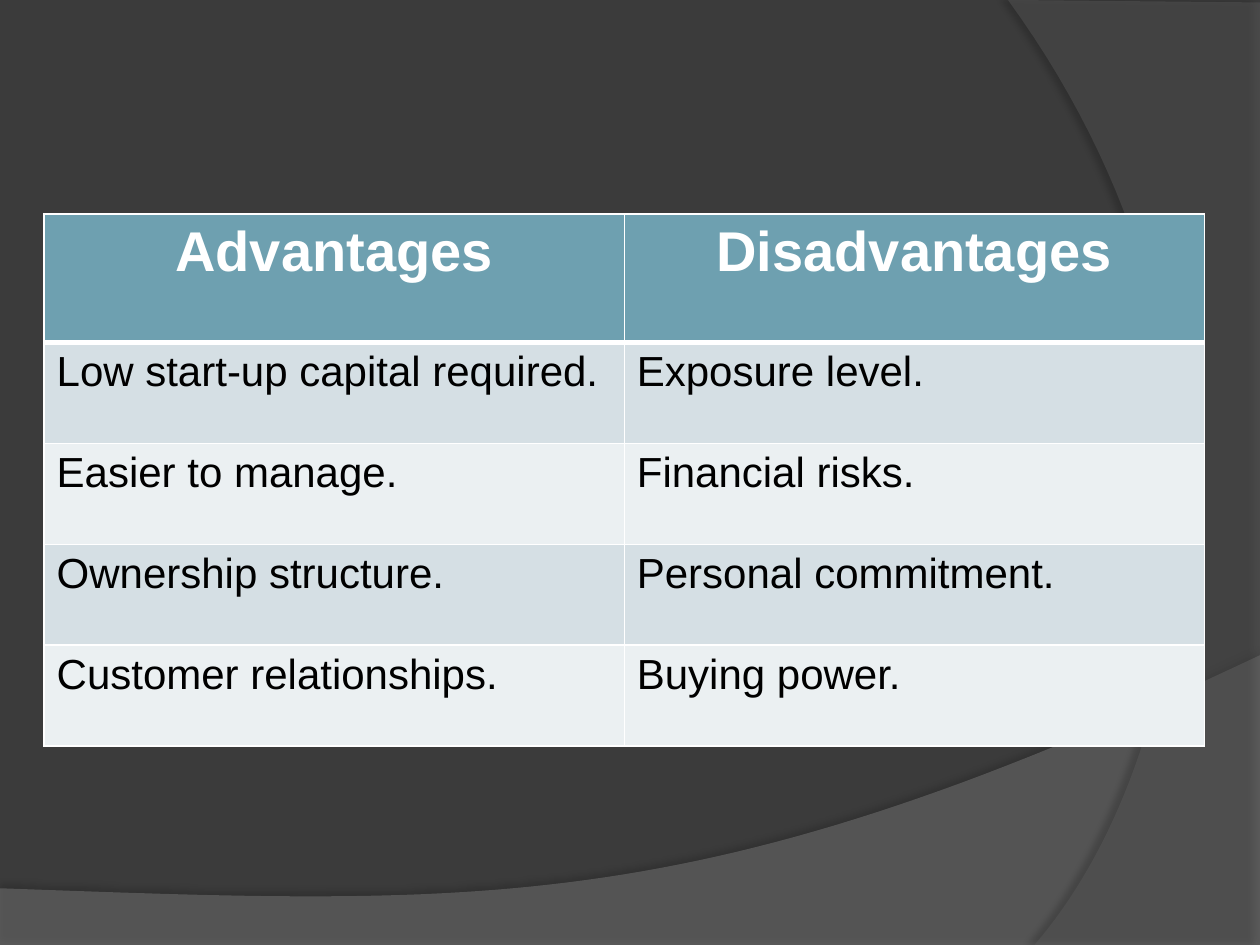
from dataclasses import dataclass

from lxml.etree import SubElement
from pptx import Presentation
from pptx.dml.color import RGBColor
from pptx.enum.text import PP_ALIGN
from pptx.oxml.ns import qn
from pptx.util import Inches, Pt

BACKGROUND = RGBColor(0x3B, 0x3B, 0x3B)
WAVE_GRAY = RGBColor(0x7F, 0x7F, 0x7F)
ARC_GRAY = RGBColor(0x5E, 0x5E, 0x5E)
HEADER_BLUE = RGBColor(0x6E, 0xA0, 0xB0)
BAND_DARK = RGBColor(0xD5, 0xDF, 0xE4)
BAND_LIGHT = RGBColor(0xEB, 0xF0, 0xF2)
WHITE = RGBColor(0xFF, 0xFF, 0xFF)
BLACK = RGBColor(0, 0, 0)

FONT = "Arial"
CURVE_STEPS = 60
Point = tuple[float, float]


@dataclass
class Swoosh:
    corners: list[Point]
    curve: tuple[Point, Point, Point, Point]
    color: RGBColor
    opacity: int
    shadow_opacity: int
    shadow_distance: float
    shadow_angle: int


@dataclass
class RowStyle:
    fill: RGBColor
    color: RGBColor
    size: int
    bold: bool
    align: PP_ALIGN
    top_line: int
    bottom_line: int


SWOOSHES = [
    Swoosh([(0, 7.05), (0, 7.51), (10, 7.51)],
           ((10, 5.2), (5.59, 7.29), (3.91, 7.19), (0, 7.05)),
           WAVE_GRAY, 45, 35, 3.5, 270),
    Swoosh([(10, 0.02), (10, 7.5)],
           ((8.21, 7.5), (9.35, 6.19), (10.18, 3), (8, 0)),
           ARC_GRAY, 40, 45, 4, 180),
]

ROWS = [
    ("Advantages", "Disadvantages"),
    ("Low start-up capital required.", "Exposure level."),
    ("Easier to manage.", "Financial risks."),
    ("Ownership structure.", "Personal commitment."),
    ("Customer relationships.", "Buying power."),
]


def curve_points(curve: tuple[Point, Point, Point, Point]) -> list[Point]:
    """Points along a cubic Bezier curve."""
    points = []
    for step in range(CURVE_STEPS + 1):
        t = step / CURVE_STEPS
        weights = ((1 - t) ** 3, 3 * t * (1 - t) ** 2, 3 * t ** 2 * (1 - t), t ** 3)
        points.append(tuple(sum(weight * point[axis] for weight, point in zip(weights, curve))
                            for axis in (0, 1)))
    return points


def add_alpha(color_element, percent: int) -> None:
    SubElement(color_element, qn("a:alpha"), val=str(percent * 1000))


def draw_swoosh(page, swoosh: Swoosh) -> None:
    outline = [(Inches(x), Inches(y)) for x, y in swoosh.corners + curve_points(swoosh.curve)]
    builder = page.shapes.build_freeform(*outline[0])
    builder.add_line_segments(outline[1:], close=True)
    shape = builder.convert_to_shape()
    shape.line.fill.background()
    shape.fill.solid()
    shape.fill.fore_color.rgb = swoosh.color
    properties = shape._element.spPr
    add_alpha(properties.find(qn("a:solidFill"))[0], swoosh.opacity)

    # Soft outer shadow
    shape.shadow.inherit = False
    shadow = SubElement(properties.find(qn("a:effectLst")), qn("a:outerShdw"),
                        blurRad=str(Pt(4)), dist=str(Pt(swoosh.shadow_distance)),
                        dir=str(swoosh.shadow_angle * 60000), algn="ctr", rotWithShape="0")
    add_alpha(SubElement(shadow, qn("a:srgbClr"), val=str(BLACK)), swoosh.shadow_opacity)


def add_border(cell, side: str, width: int) -> None:
    line = SubElement(cell._tc.get_or_add_tcPr(), qn(f"a:ln{side}"), w=str(Pt(width)))
    SubElement(SubElement(line, qn("a:solidFill")), qn("a:srgbClr"), val=str(WHITE))


def row_style(index: int) -> RowStyle:
    if index == 0:
        return RowStyle(HEADER_BLUE, WHITE, 32, True, PP_ALIGN.CENTER, 1, 3)
    fill = BAND_DARK if index % 2 else BAND_LIGHT
    return RowStyle(fill, BLACK, 24, False, PP_ALIGN.LEFT, 3 if index == 1 else 1, 1)


def fill_cell(cell, text: str, style: RowStyle) -> None:
    for side, width in (("L", 1), ("R", 1), ("T", style.top_line), ("B", style.bottom_line)):
        add_border(cell, side, width)
    cell.fill.solid()
    cell.fill.fore_color.rgb = style.fill
    cell.text = text
    para = cell.text_frame.paragraphs[0]
    para.alignment = style.align
    para.font.name = FONT
    para.font.size = Pt(style.size)
    para.font.bold = style.bold
    para.font.color.rgb = style.color


def draw_table(page) -> None:
    table = page.shapes.add_table(len(ROWS), len(ROWS[0]), Inches(0.35), Inches(1.7),
                                  Inches(9.21), Inches(4.22)).table
    for index, texts in enumerate(ROWS):
        table.rows[index].height = Inches(0.8 if index else 1.02)
        for column, text in enumerate(texts):
            fill_cell(table.cell(index, column), text, row_style(index))


def main() -> None:
    deck = Presentation()
    deck.slide_width, deck.slide_height = Inches(10), Inches(7.5)
    page = deck.slides.add_slide(deck.slide_layouts[6])

    # Background and its curved bands
    page.background.fill.solid()
    page.background.fill.fore_color.rgb = BACKGROUND
    for swoosh in SWOOSHES:
        draw_swoosh(page, swoosh)

    # Comparison table
    draw_table(page)
    deck.save("out.pptx")


if __name__ == "__main__":
    main()
